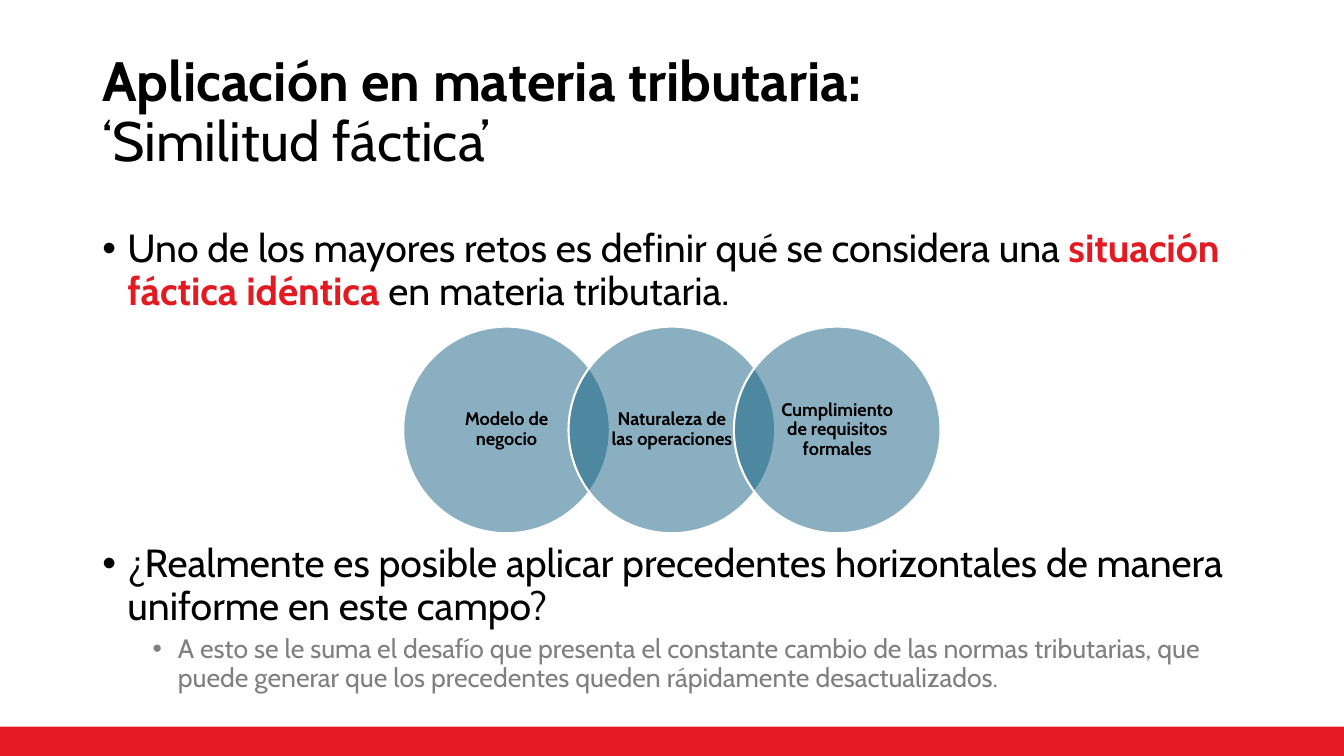
"""Build the slide on factual similarity in tax matters."""
from dataclasses import dataclass

from lxml.etree import SubElement
from pptx import Presentation
from pptx.dml.color import RGBColor
from pptx.enum.shapes import MSO_SHAPE
from pptx.enum.text import MSO_ANCHOR, PP_ALIGN
from pptx.oxml.ns import qn
from pptx.util import Pt


@dataclass(frozen=True)
class Theme:
    font: str = "Cabin"
    black: RGBColor = RGBColor(0x00, 0x00, 0x00)
    white: RGBColor = RGBColor(0xFF, 0xFF, 0xFF)
    red: RGBColor = RGBColor(0xE3, 0x1A, 0x22)
    gray: RGBColor = RGBColor(0x80, 0x80, 0x80)
    teal: RGBColor = RGBColor(0x15, 0x60, 0x82)
    title_size: float = 39.6
    body_size: float = 28
    detail_size: float = 19
    label_size: float = 13


def add_run(paragraph, text, size, color, bold=False):
    """Append one formatted run to a paragraph."""
    run = paragraph.add_run()
    run.text = text
    run.font.name = theme.font
    run.font.size = Pt(size)
    run.font.bold = bold
    run.font.color.rgb = color


def set_bullet(paragraph, margin):
    """Give a paragraph a hanging bullet and tight line spacing."""
    paragraph.line_spacing = 0.9
    properties = paragraph._p.get_or_add_pPr()
    properties.set("marL", str(Pt(margin)))
    properties.set("indent", str(Pt(-18)))
    SubElement(properties, qn("a:buFont"), typeface="Arial")
    SubElement(properties, qn("a:buChar"), char="•")


theme = Theme()
presentation = Presentation()
presentation.slide_width = Pt(960)
presentation.slide_height = Pt(540)
slide = presentation.slides.add_slide(presentation.slide_layouts[6])

footer_band = slide.shapes.add_shape(MSO_SHAPE.RECTANGLE, Pt(0), Pt(519), Pt(960), Pt(21))
footer_band.shadow.inherit = False
footer_band.fill.solid()
footer_band.fill.fore_color.rgb = theme.red
footer_band.line.fill.background()

title_frame = slide.shapes.add_textbox(Pt(66), Pt(28.8), Pt(589), Pt(104.4)).text_frame
title_frame.word_wrap = True
title_frame.vertical_anchor = MSO_ANCHOR.MIDDLE
title = title_frame.paragraphs[0]
title.line_spacing = 0.9
add_run(title, "Aplicación en materia tributaria:", theme.title_size, theme.black, True)
title.add_line_break()
add_run(title, "‘Similitud fáctica’", theme.title_size, theme.black)

challenge_frame = slide.shapes.add_textbox(Pt(66), Pt(160), Pt(828), Pt(70)).text_frame
challenge_frame.word_wrap = True
challenge = challenge_frame.paragraphs[0]
set_bullet(challenge, 18)
add_run(challenge, "Uno de los mayores retos es definir qué se considera una ", theme.body_size, theme.black)
add_run(challenge, "situación fáctica idéntica ", theme.body_size, theme.red, True)
add_run(challenge, "en materia tributaria.", theme.body_size, theme.black)

question_frame = slide.shapes.add_textbox(Pt(66), Pt(385), Pt(828), Pt(118)).text_frame
question_frame.word_wrap = True
question = question_frame.paragraphs[0]
set_bullet(question, 18)
add_run(
    question,
    "¿Realmente es posible aplicar precedentes horizontales de manera uniforme en este campo?",
    theme.body_size,
    theme.black,
)
detail = question_frame.add_paragraph()
detail.level = 1
detail.space_before = Pt(5)
set_bullet(detail, 54)
add_run(
    detail,
    "A esto se le suma el desafío que presenta el constante cambio de las normas tributarias, "
    "que puede generar que los precedentes queden rápidamente desactualizados.",
    theme.detail_size,
    theme.gray,
)

criteria = [
    "Modelo de negocio",
    "Naturaleza de las operaciones",
    "Cumplimiento de requisitos formales",
]
diameter = 147.6
for index, criterion in enumerate(criteria):
    circle = slide.shapes.add_shape(
        MSO_SHAPE.OVAL, Pt(288 + index * 118.1), Pt(233.3), Pt(diameter), Pt(diameter)
    )
    circle.shadow.inherit = False
    circle.fill.solid()
    circle.fill.fore_color.rgb = theme.teal
    fill_color = circle._element.spPr.find(qn("a:solidFill")).find(qn("a:srgbClr"))
    SubElement(fill_color, qn("a:alpha"), val="50000")
    circle.line.color.rgb = theme.white
    circle.line.width = Pt(1.5)
    label_frame = circle.text_frame
    label_frame.word_wrap = True
    label_frame.vertical_anchor = MSO_ANCHOR.MIDDLE
    label_frame.margin_left = label_frame.margin_right = Pt(8)
    label_frame.margin_top = label_frame.margin_bottom = Pt(1.5)
    label = label_frame.paragraphs[0]
    label.alignment = PP_ALIGN.CENTER
    label.line_spacing = 0.9
    add_run(label, criterion, theme.label_size, theme.black, True)

presentation.save("out.pptx")
